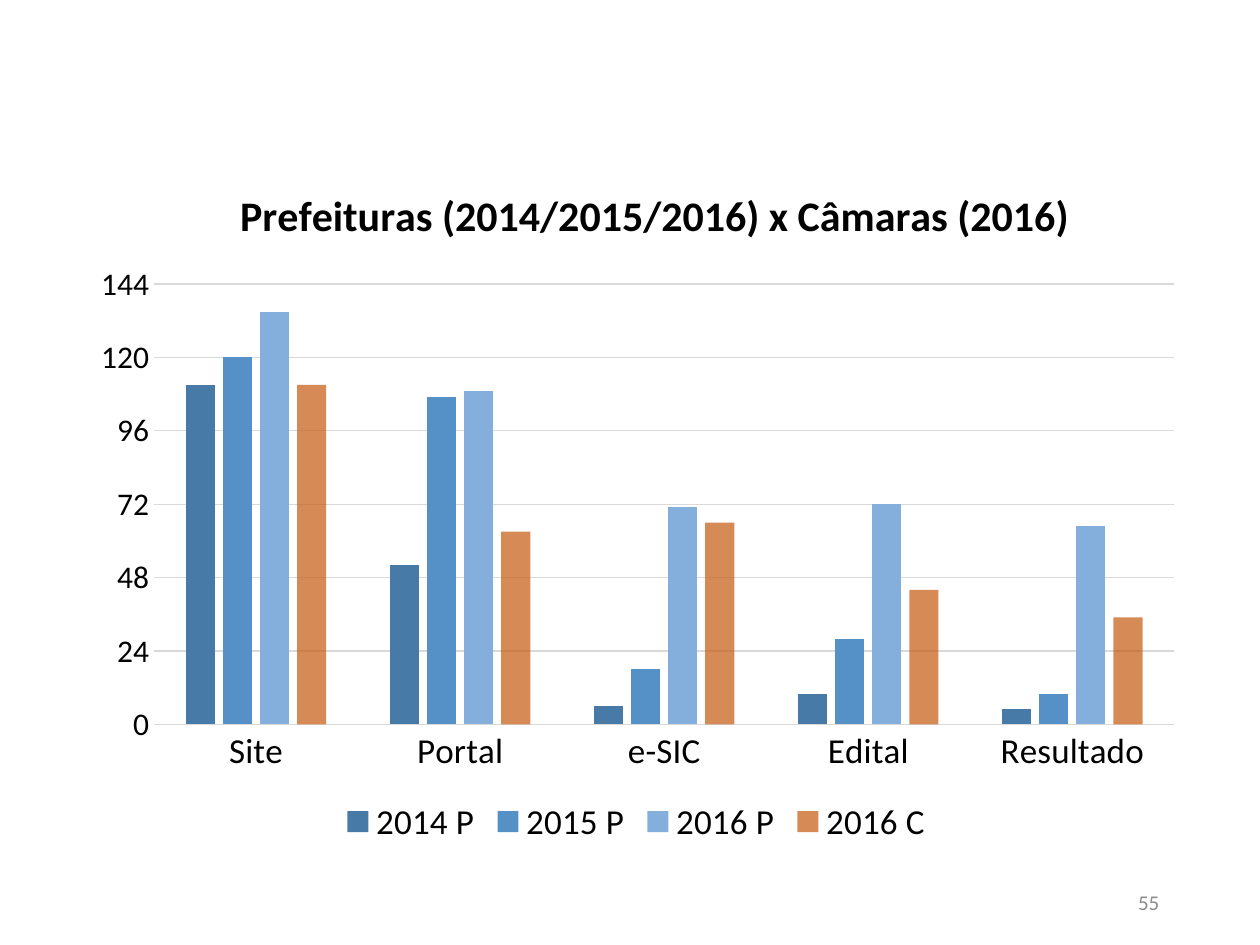
from lxml import etree
from pptx import Presentation
from pptx.chart.data import CategoryChartData
from pptx.dml.color import RGBColor
from pptx.enum.chart import XL_CHART_TYPE, XL_LEGEND_POSITION, XL_TICK_MARK
from pptx.enum.text import MSO_ANCHOR, PP_ALIGN
from pptx.oxml.ns import qn
from pptx.util import Inches, Pt

CLUSTERED = XL_CHART_TYPE.COLUMN_CLUSTERED
BOTTOM = XL_LEGEND_POSITION.BOTTOM
NO_TICK = XL_TICK_MARK.NONE
MIDDLE = MSO_ANCHOR.MIDDLE
RIGHT = PP_ALIGN.RIGHT

WIDTH, HEIGHT = Inches(10), Inches(7.5)
FONT = "Calibri"
COLORS = {
    "text": "000000",
    "number": "8C8C8C",
    "grid": "D9D9D9",
    "2014 P": "487AA8",
    "2015 P": "5591C7",
    "2016 P": "84AEDC",
    "2016 C": "C55A11",
}
CATEGORIES = ["Site", "Portal", "e-SIC", "Edital", "Resultado"]
SERIES = {
    "2014 P": [111, 52, 6, 10, 5],
    "2015 P": [120, 107, 18, 28, 10],
    "2016 P": [135, 109, 71, 72, 65],
    "2016 C": [111, 63, 66, 44, 35],
}
OPACITY = {"2016 C": 70}


def rgb(name):
    return RGBColor.from_string(COLORS[name])


def share(x, y, w, h):
    return int(WIDTH * x), int(HEIGHT * y), int(WIDTH * w), int(HEIGHT * h)


def style_font(font, size, color="text", bold=False):
    font.name = FONT
    font.size = Pt(size)
    font.bold = bold
    font.color.rgb = rgb(color)


def style_line(line):
    line.color.rgb = rgb("grid")
    line.width = Pt(0.75)


def set_layout(parent, index, **places):
    for old in parent.findall(qn("c:layout")):
        parent.remove(old)
    layout = etree.Element(qn("c:layout"))
    manual = etree.SubElement(layout, qn("c:manualLayout"))
    for tag, value in places.items():
        etree.SubElement(manual, qn(f"c:{tag}")).set("val", str(value))
    parent.insert(index, layout)


def style_title(chart):
    tf = chart.chart_title.text_frame
    r = tf.paragraphs[0].add_run()
    r.text = "Prefeituras (2014/2015/2016) x Câmaras (2016)"
    style_font(r.font, 24, bold=True)
    chart.chart_title.include_in_layout = False
    title = chart.chart_title._element
    set_layout(title, 1, xMode="edge", yMode="edge", x=0.14, y=0.04)


def style_axes(chart):
    for axis, size in ((chart.category_axis, 20), (chart.value_axis, 18)):
        axis.major_tick_mark = axis.minor_tick_mark = NO_TICK
        style_font(axis.tick_labels.font, size)
    style_line(chart.category_axis.format.line)
    values = chart.value_axis
    values.minimum_scale, values.maximum_scale, values.major_unit = 0, 144, 24
    values.format.line.fill.background()
    style_line(values.major_gridlines.format.line)


def style_bars(chart):
    plot = chart.plots[0]
    plot.gap_width, plot.overlap = 219, -27
    plot.vary_by_categories = False
    for s in plot.series:
        s.invert_if_negative = False
        fill = s.format.fill
        fill.solid()
        fill.fore_color.rgb = rgb(s.name)
        if s.name in OPACITY:
            color = s._element.find(".//" + qn("a:srgbClr"))
            alpha = etree.SubElement(color, qn("a:alpha"))
            alpha.set("val", str(OPACITY[s.name] * 1000))


def add_column_chart(slide, box):
    data = CategoryChartData()
    data.categories = CATEGORIES
    for name, values in SERIES.items():
        data.add_series(name, values)
    chart = slide.shapes.add_chart(CLUSTERED, *box, data).chart
    style_font(chart.font, 10)
    style_title(chart)
    style_axes(chart)
    style_bars(chart)
    chart.has_legend = True
    chart.legend.position = BOTTOM
    chart.legend.include_in_layout = False
    style_font(chart.legend.font, 20)
    area = chart._chartSpace.find(".//" + qn("c:plotArea"))
    set_layout(area, 0, layoutTarget="inner", xMode="edge", yMode="edge",
               x=0.07, y=0.19, w=0.91, h=0.63)


def add_page_number(slide, box, text):
    tf = slide.shapes.add_textbox(*box).text_frame
    tf.word_wrap = True
    tf.vertical_anchor = MIDDLE
    p = tf.paragraphs[0]
    p.alignment = RIGHT
    r = p.add_run()
    r.text = text
    style_font(r.font, 12, "number")


def main():
    prs = Presentation()
    prs.slide_width, prs.slide_height = WIDTH, HEIGHT
    slide = prs.slides.add_slide(prs.slide_layouts[6])
    add_page_number(slide, share(0.71, 0.93, 0.22, 0.05), "55")
    add_column_chart(slide, share(0.06, 0.16, 0.89, 0.74))
    prs.save("out.pptx")


if __name__ == "__main__":
    main()
